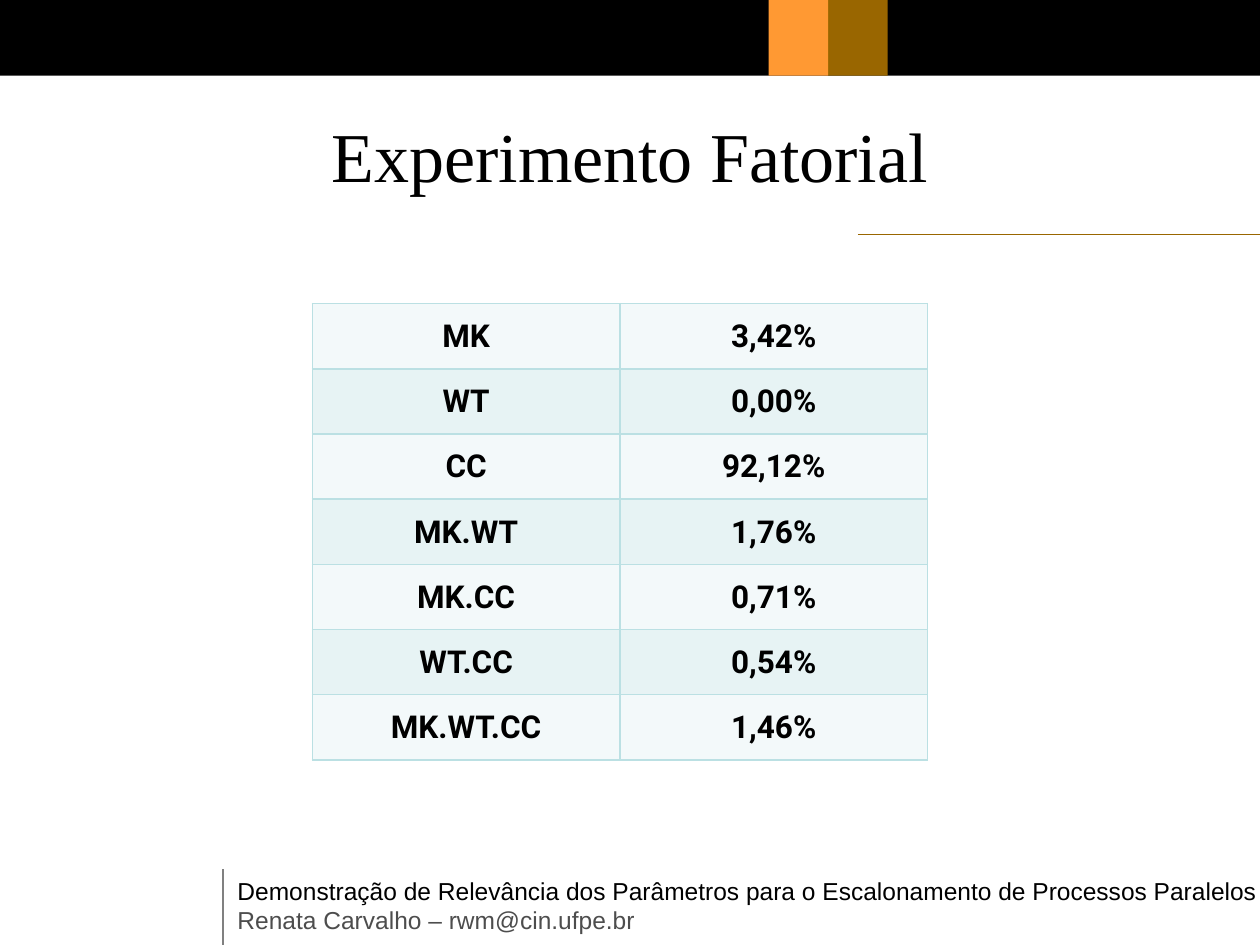
"""Build a slide with the effect percentages of a factorial experiment."""
from dataclasses import dataclass

from lxml import etree
from pptx import Presentation
from pptx.dml.color import RGBColor
from pptx.enum.shapes import MSO_CONNECTOR, MSO_SHAPE
from pptx.enum.text import MSO_ANCHOR, MSO_AUTO_SIZE, PP_ALIGN
from pptx.oxml.ns import qn
from pptx.util import Pt

RECTANGLE = MSO_SHAPE.RECTANGLE
STRAIGHT = MSO_CONNECTOR.STRAIGHT
MIDDLE = MSO_ANCHOR.MIDDLE
TOP = MSO_ANCHOR.TOP
CENTER = PP_ALIGN.CENTER
LEFT = PP_ALIGN.LEFT
GROW = MSO_AUTO_SIZE.SHAPE_TO_FIT_TEXT


@dataclass(frozen=True)
class Theme:
    black: str = "000000"
    brown: str = "996600"
    orange: str = "FF9933"
    rule_gray: str = "808080"
    author_gray: str = "4D4D4D"
    border: str = "BBE0E3"
    bands: tuple = ("F3F9FA", "E7F3F4")
    title_font: str = "Times New Roman"
    table_font: str = "Roboto"
    footer_font: str = "Arial"
    title_size: int = 40
    table_size: int = 18
    footer_size: int = 14


THEME = Theme()

EFFECTS = [
    ("MK", "3,42%"),
    ("WT", "0,00%"),
    ("CC", "92,12%"),
    ("MK.WT", "1,76%"),
    ("MK.CC", "0,71%"),
    ("WT.CC", "0,54%"),
    ("MK.WT.CC", "1,46%"),
]


def add_block(slide, left, width, color):
    block = slide.shapes.add_shape(RECTANGLE, Pt(left), 0, Pt(width), Pt(43.2))
    block.shadow.inherit = False
    block.fill.solid()
    block.fill.fore_color.rgb = RGBColor.from_string(color)
    block.line.fill.background()


def add_rule(slide, x1, y1, x2, y2, color):
    rule = slide.shapes.add_connector(STRAIGHT, Pt(x1), Pt(y1), Pt(x2), Pt(y2))
    rule.line.width = Pt(0.75)
    rule.line.color.rgb = RGBColor.from_string(color)
    etree.SubElement(rule._element.spPr, qn("a:effectLst"))


def style_paragraph(paragraph, text, font, size, color, align, bold=False):
    paragraph.text = text
    paragraph.alignment = align
    paragraph.font.name = font
    paragraph.font.size = Pt(size)
    paragraph.font.bold = bold
    paragraph.font.color.rgb = RGBColor.from_string(color)


def add_text(slide, box, lines, font, size, align, anchor, wrap):
    frame = slide.shapes.add_textbox(*map(Pt, box)).text_frame
    frame.word_wrap = wrap
    frame.vertical_anchor = anchor
    if not wrap:
        frame.auto_size = GROW
    for index, (text, color) in enumerate(lines):
        paragraph = frame.add_paragraph() if index else frame.paragraphs[0]
        style_paragraph(paragraph, text, font, size, color, align)


def set_borders(cell, color):
    properties = cell._tc.get_or_add_tcPr()
    for position, side in enumerate(("a:lnL", "a:lnR", "a:lnT", "a:lnB")):
        border = etree.Element(qn(side), w=str(Pt(1)))
        fill = etree.SubElement(border, qn("a:solidFill"))
        etree.SubElement(fill, qn("a:srgbClr"), val=color)
        properties.insert(position, border)


def add_effects_table(slide, left, top, column_width, row_height):
    columns = len(EFFECTS[0])
    table = slide.shapes.add_table(
        len(EFFECTS), columns, Pt(left), Pt(top),
        Pt(column_width * columns), Pt(row_height * len(EFFECTS))).table
    table.first_row = False
    for row_index, effect in enumerate(EFFECTS):
        table.rows[row_index].height = Pt(row_height)
        band = RGBColor.from_string(THEME.bands[row_index % 2])
        for column_index, text in enumerate(effect):
            cell = table.cell(row_index, column_index)
            cell.fill.solid()
            cell.fill.fore_color.rgb = band
            cell.vertical_anchor = MIDDLE
            cell.margin_left = cell.margin_right = cell.margin_top = Pt(0.75)
            cell.margin_bottom = 0
            style_paragraph(cell.text_frame.paragraphs[0], text, THEME.table_font,
                            THEME.table_size, THEME.black, CENTER, bold=True)
            set_borders(cell, THEME.border)


def main():
    presentation = Presentation()
    presentation.slide_width = Pt(720)
    presentation.slide_height = Pt(540)
    slide = presentation.slides.add_slide(presentation.slide_layouts[6])

    add_block(slide, 0, 720, THEME.black)
    add_rule(slide, 127.4, 496.8, 127.4, 540, THEME.rule_gray)
    footer = [
        ("Demonstração de Relevância dos Parâmetros para o Escalonamento "
         "de Processos Paralelos", THEME.black),
        ("Renata Carvalho – rwm@cin.ufpe.br", THEME.author_gray),
    ]
    add_text(slide, (128.6, 496.8, 600, 41), footer, THEME.footer_font,
             THEME.footer_size, LEFT, TOP, wrap=False)
    add_rule(slide, 490.3, 133.9, 720, 133.9, THEME.brown)
    add_block(slide, 473.2, 34, THEME.brown)
    add_block(slide, 439.2, 34, THEME.orange)
    add_text(slide, (36, 43.2, 648, 90), [("Experimento Fatorial", THEME.black)],
             THEME.title_font, THEME.title_size, CENTER, MIDDLE, wrap=True)
    add_effects_table(slide, 178.5, 173.5, 175.75, 37.25)

    presentation.save("out.pptx")


if __name__ == "__main__":
    main()
